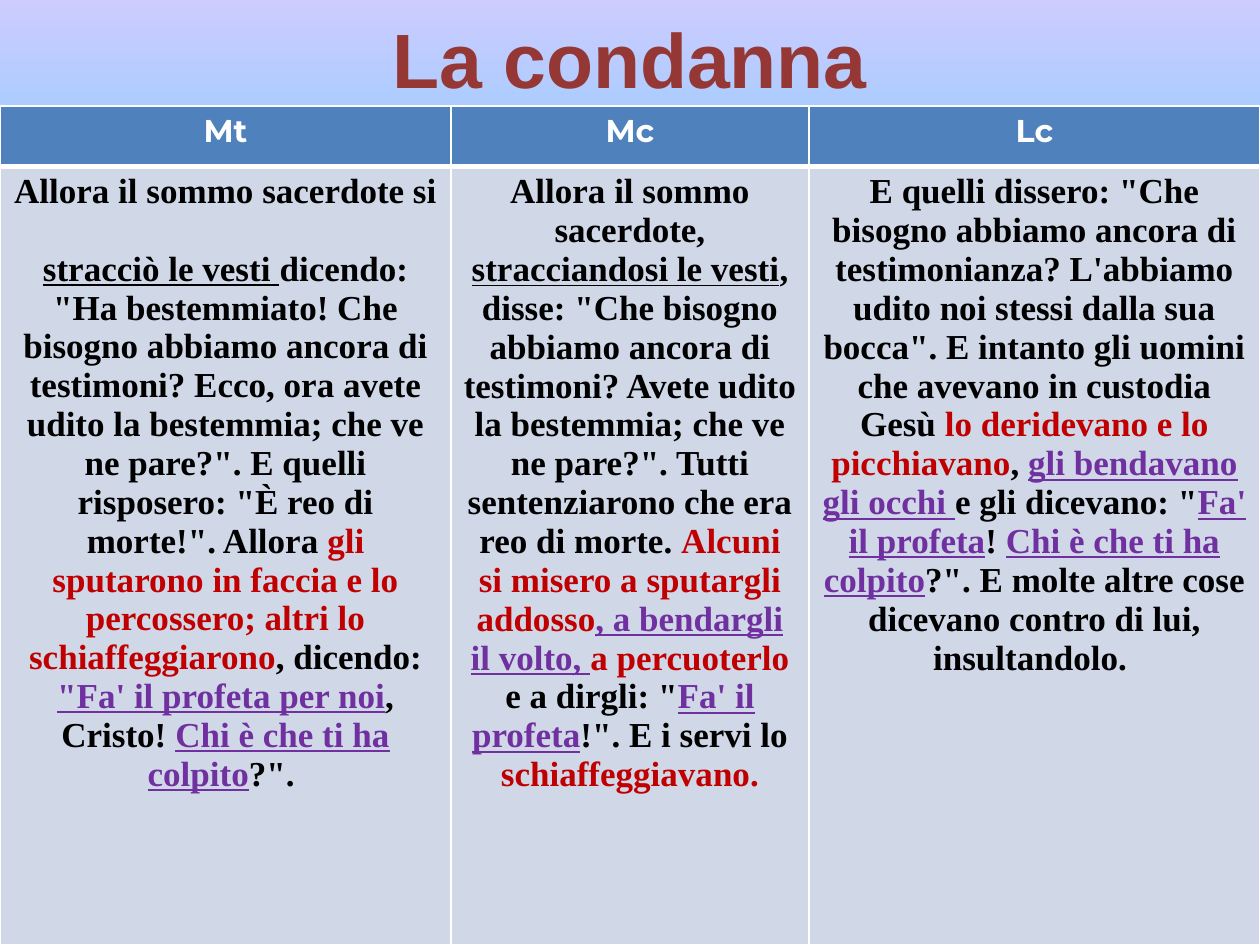
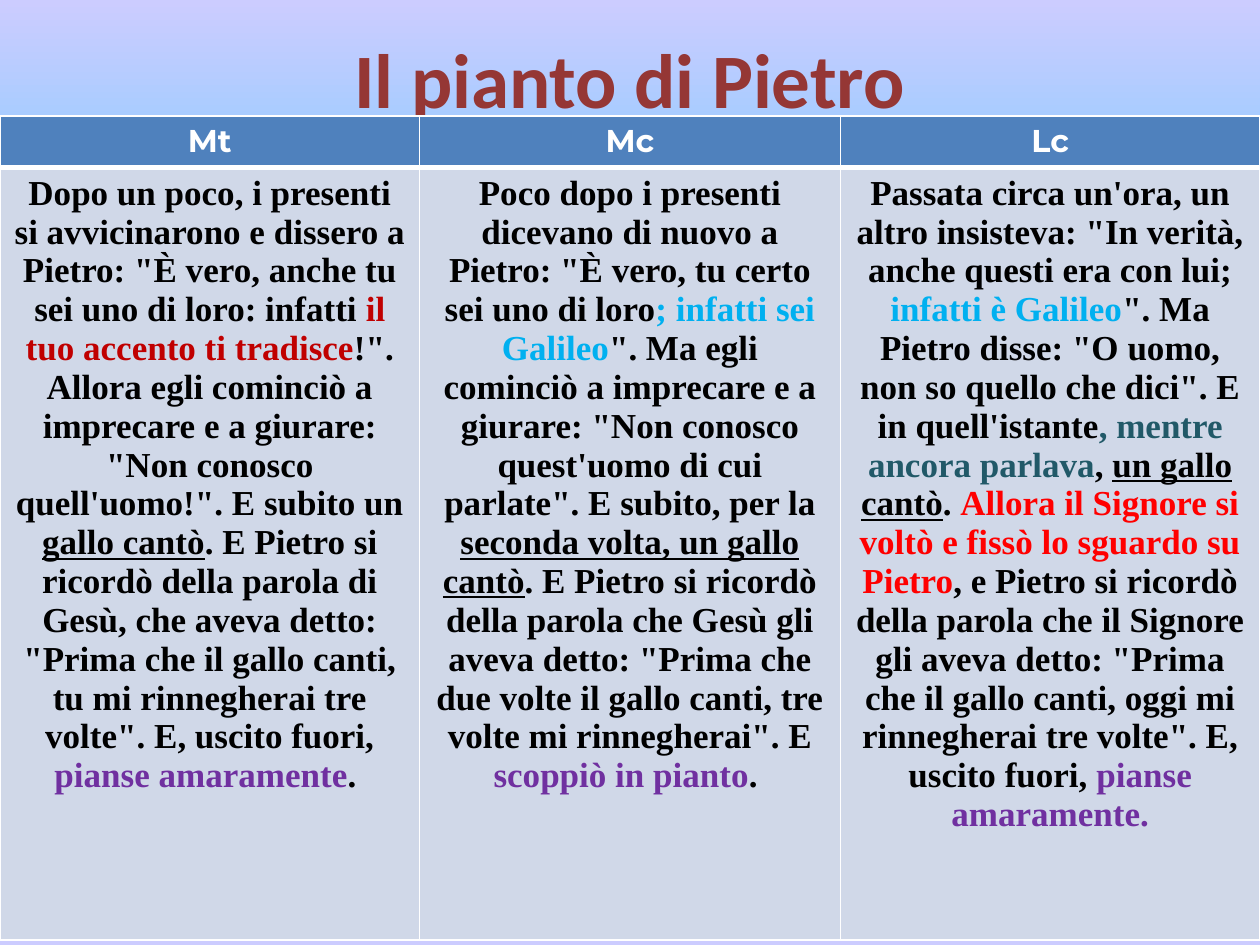
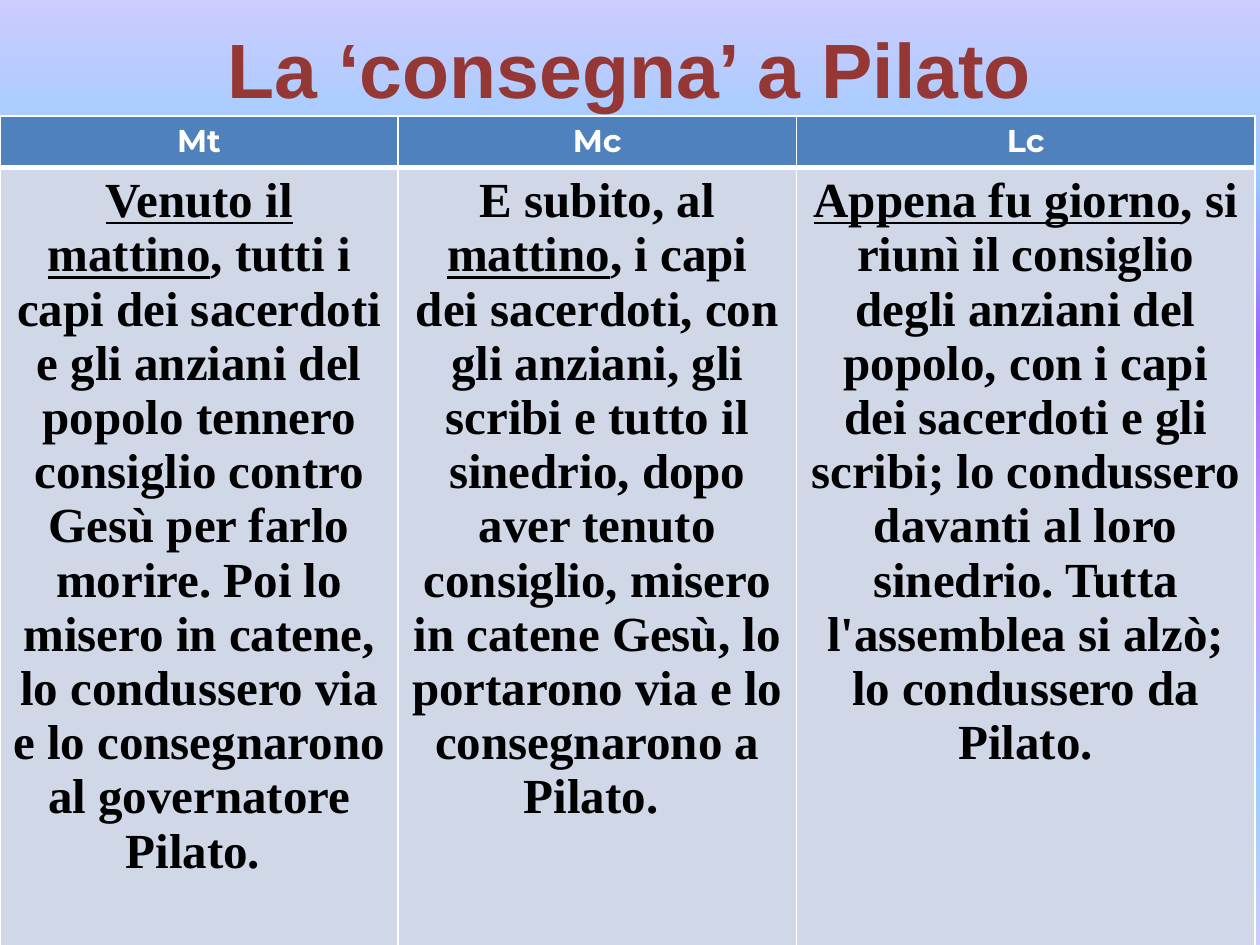
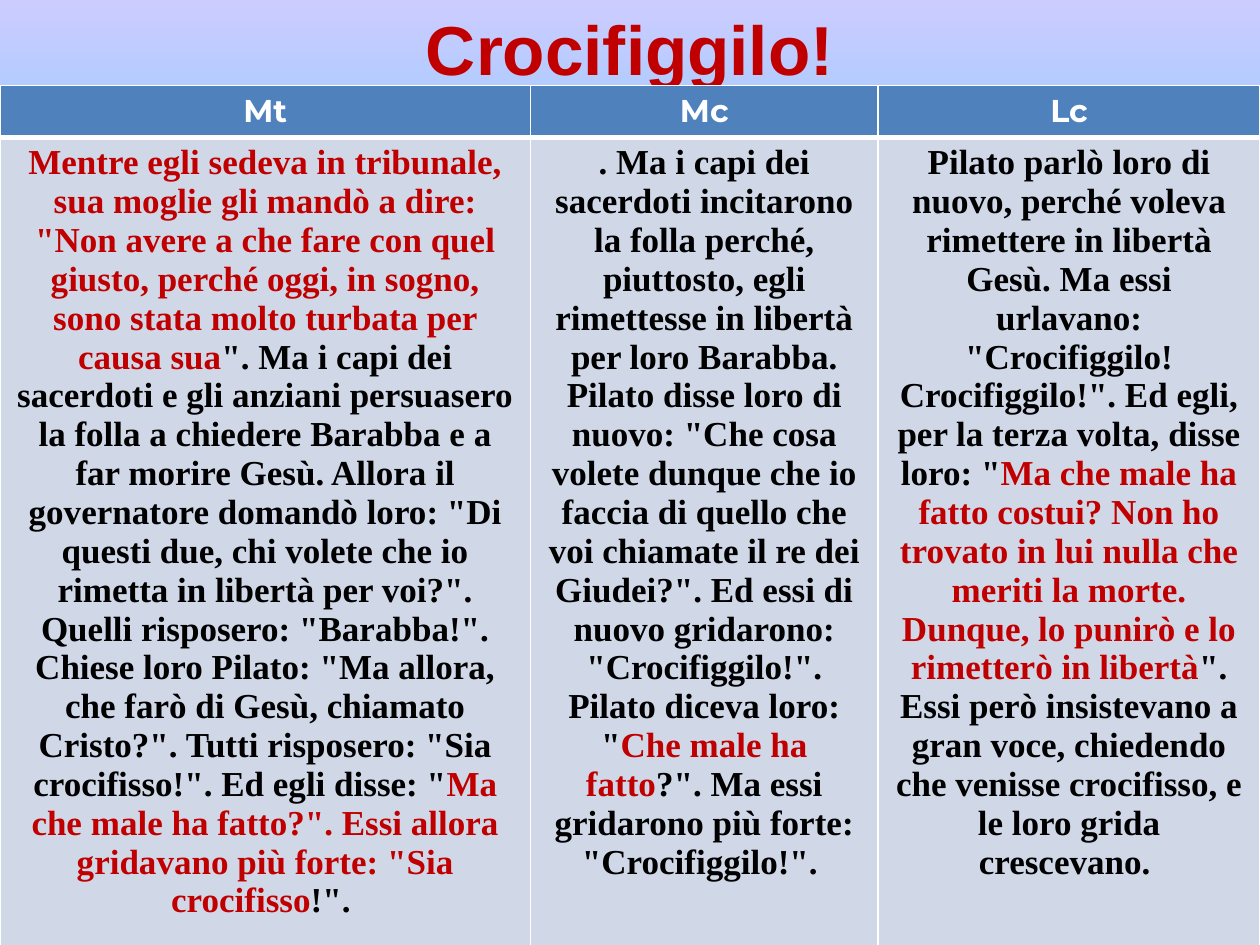
"""Builds four synoptic slides that compare Mt, Mc and Lc on the Passion."""
from dataclasses import dataclass
from typing import NamedTuple

from lxml import etree
from pptx import Presentation
from pptx import util as u
from pptx.dml.color import RGBColor
from pptx.enum import text
from pptx.oxml.ns import qn

PX = 9144
SLIDE_WIDTH, SLIDE_HEIGHT = 1000, 750
TITLE_LEFT, TITLE_WIDTH = 50, 900
TITLE_ONLY_LAYOUT = 5
THIN, THICK = 1, 3
GOSPELS = ("Mt", "Mc", "Lc")
HEADER_FONT, VERSE_FONT = "Montserrat", "Times New Roman"

COLORS = {
    "black": "000000",
    "white": "FFFFFF",
    "brown": "953735",
    "crimson": "C00000",
    "red": "FF0000",
    "purple": "7030A0",
    "sky": "00B0F0",
    "teal": "215968",
    "header": "4F81BD",
    "body": "D0D8E8",
}
BACKDROP = (
    (0, "CCCCFF"), (18, "99CCFF"), (36, "9966FF"),
    (61, "CC99FF"), (82, "99CCFF"), (100, "CCCCFF"),
)


class Span(NamedTuple):
    """A piece of verse with one colour and underline."""
    words: str
    color: str = "black"
    underline: bool = False


@dataclass(frozen=True)
class Passage:
    """A paragraph of verse and the space above it in points."""
    spans: tuple[Span, ...]
    space_before: int = 0


@dataclass(frozen=True)
class Synopsis:
    """One slide: its title and a table with one column per gospel."""
    title: str
    title_height: int
    table_top: int
    header_height: int
    body_height: int
    widths: tuple[int, ...]
    columns: tuple[tuple[Passage, ...], ...]
    title_font: str = "Arial"
    title_size: float = 44
    title_color: str = "brown"
    verse_size: int = 20


def under(words: str, color: str = "black") -> Span:
    """Return an underlined span."""
    return Span(words, color, True)


def passage(*spans: Span | str, space_before: int = 0) -> Passage:
    """Return a passage in which bare strings are plain spans."""
    return Passage(
        tuple(Span(span) if isinstance(span, str) else span for span in spans),
        space_before,
    )


SYNOPSES = (
    Synopsis(
        "La condanna", 92, 84, 48, 618, (358, 284, 358),
        (
            (
                passage("Allora il sommo sacerdote si "),
                passage(
                    under("stracciò le vesti "),
                    'dicendo: "Ha bestemmiato! Che bisogno abbiamo ancora di '
                    'testimoni? Ecco, ora avete udito la bestemmia; che ve ne '
                    'pare?". E quelli risposero: "È reo di morte!". Allora ',
                    Span("gli sputarono in faccia e lo percossero; altri lo "
                         "schiaffeggiarono", "crimson"),
                    ", dicendo: ",
                    under('''"Fa' il profeta per noi''', "purple"),
                    ", Cristo! ",
                    under("Chi è che ti ha colpito", "purple"),
                    '?". ',
                    space_before=22,
                ),
            ),
            (
                passage(
                    "Allora il sommo sacerdote, ",
                    under("stracciandosi le vesti"),
                    ', disse: "Che bisogno abbiamo ancora di testimoni? Avete '
                    'udito la bestemmia; che ve ne pare?". Tutti sentenziarono '
                    'che era reo di morte. ',
                    Span("Alcuni si misero a sputargli addosso", "crimson"),
                    under(", a bendargli il volto, ", "purple"),
                    Span("a percuoterlo ", "crimson"),
                    'e a dirgli: "',
                    under("Fa' il profeta", "purple"),
                    '!". E i servi lo ',
                    Span("schiaffeggiavano.", "crimson"),
                ),
            ),
            (
                passage(
                    'E quelli dissero: "Che bisogno abbiamo ancora di '
                    "testimonianza? L'abbiamo udito noi stessi dalla sua "
                    'bocca". E intanto gli uomini che avevano in custodia Gesù',
                    Span(" lo deridevano e lo picchiavano", "crimson"),
                    ", ",
                    under("gli bendavano gli occhi ", "purple"),
                    'e gli dicevano: "',
                    under("Fa' il profeta", "purple"),
                    "! ",
                    under("Chi è che ti ha colpito", "purple"),
                    '?". E molte altre cose dicevano contro di lui, '
                    'insultandolo. ',
                ),
            ),
        ),
    ),
    Synopsis(
        "Il pianto di Pietro", 123, 92, 41, 613, (333, 334, 333),
        (
            (
                passage(
                    'Dopo un poco, i presenti si avvicinarono e dissero a '
                    'Pietro: "È vero, anche tu sei uno di loro: infatti ',
                    Span("il tuo accento ti tradisce", "crimson"),
                    '!". Allora egli cominciò a imprecare e a giurare: "Non '
                    "conosco quell'uomo!"
                    '". E subito un ',
                    under("gallo cantò"),
                    '. E Pietro si ricordò della parola di Gesù, che aveva '
                    'detto: "Prima che il gallo canti, tu mi rinnegherai tre '
                    'volte". E, uscito fuori, ',
                    Span("pianse amaramente", "purple"),
                    ". ",
                ),
            ),
            (
                passage(
                    'Poco dopo i presenti dicevano di nuovo a Pietro: "È vero, '
                    'tu certo sei uno di loro',
                    Span("; infatti sei Galileo", "sky"),
                    '". Ma egli cominciò a imprecare e a giurare: "Non conosco '
                    "quest'uomo di cui parlate"
                    '". E subito, per la ',
                    under("seconda volta, un gallo cantò"),
                    '. E Pietro si ricordò della parola che Gesù gli aveva '
                    'detto: "Prima che due volte il gallo canti, tre volte mi '
                    'rinnegherai". E ',
                    Span("scoppiò in pianto", "purple"),
                    ". ",
                ),
            ),
            (
                passage(
                    "Passata circa un'ora, un altro insisteva: "
                    '"In verità, anche questi era con lui; ',
                    Span("infatti è Galileo", "sky"),
                    '". Ma Pietro disse: "O uomo, non so quello che dici". '
                    "E in quell'istante",
                    Span(", mentre ancora parlava", "teal"),
                    ", ",
                    under("un gallo cantò"),
                    ". ",
                    Span("Allora il Signore si voltò e fissò lo sguardo su "
                         "Pietro", "red"),
                    ', e Pietro si ricordò della parola che il Signore gli '
                    'aveva detto: "Prima che il gallo canti, oggi mi '
                    'rinnegherai tre volte". E, uscito fuori, ',
                    Span("pianse amaramente.", "purple"),
                ),
            ),
        ),
        title_font="Calibri",
    ),
    Synopsis(
        "La ‘consegna’ a Pilato", 107, 92, 41, 666, (316, 316, 364),
        (
            (
                passage(
                    under("Venuto il mattino"),
                    ", tutti i capi dei sacerdoti e gli anziani del popolo "
                    "tennero consiglio contro Gesù per farlo morire. Poi lo "
                    "misero in catene, lo condussero via e lo consegnarono al "
                    "governatore Pilato. ",
                ),
            ),
            (
                passage(
                    "E subito, al ",
                    under("mattino"),
                    ", i capi dei sacerdoti, con gli anziani, gli scribi e "
                    "tutto il sinedrio, dopo aver tenuto consiglio, misero in "
                    "catene Gesù, lo portarono via e lo consegnarono a "
                    "Pilato. ",
                ),
            ),
            (
                passage(
                    under("Appena fu giorno"),
                    ", si riunì il consiglio degli anziani del popolo, con i "
                    "capi dei sacerdoti e gli scribi; lo condussero davanti al "
                    "loro sinedrio. Tutta l'assemblea si alzò; lo condussero "
                    "da Pilato.",
                ),
            ),
        ),
        verse_size=28,
    ),
    Synopsis(
        "Crocifiggilo!", 76, 68, 41, 776, (421, 276, 303),
        (
            (
                passage(
                    Span('Mentre egli sedeva in tribunale, sua moglie gli '
                         'mandò a dire: "Non avere a che fare con quel giusto, '
                         'perché oggi, in sogno, sono stata molto turbata per '
                         'causa sua', "crimson"),
                    '". Ma i capi dei sacerdoti e gli anziani persuasero la '
                    'folla a chiedere Barabba e a far morire Gesù. Allora il '
                    'governatore domandò loro: "Di questi due, chi volete che '
                    'io rimetta in libertà per voi?". Quelli risposero: '
                    '"Barabba!". Chiese loro Pilato: "Ma allora, che farò di '
                    'Gesù, chiamato Cristo?". Tutti risposero: "Sia '
                    'crocifisso!". Ed egli disse: "',
                    Span('Ma che male ha fatto?". Essi allora gridavano più '
                         'forte: "Sia crocifisso', "crimson"),
                    '!". ',
                ),
            ),
            (
                passage(
                    ". Ma i capi dei sacerdoti incitarono la folla perché, "
                    "piuttosto, egli rimettesse in libertà per loro Barabba.",
                ),
                passage(
                    'Pilato disse loro di nuovo: "Che cosa volete dunque che '
                    'io faccia di quello che voi chiamate il re dei Giudei?". '
                    'Ed essi di nuovo gridarono: "Crocifiggilo!". Pilato '
                    'diceva loro: "',
                    Span("Che male ha fatto", "crimson"),
                    '?". Ma essi gridarono più forte: "Crocifiggilo!". ',
                ),
            ),
            (
                passage(
                    'Pilato parlò loro di nuovo, perché voleva rimettere in '
                    'libertà Gesù. Ma essi urlavano: "Crocifiggilo! '
                    'Crocifiggilo!". Ed egli, per la terza volta, disse loro: '
                    '"',
                    Span("Ma che male ha fatto costui? Non ho trovato in lui "
                         "nulla che meriti la morte. Dunque, lo punirò e lo "
                         "rimetterò in libertà", "crimson"),
                    '". Essi però insistevano a gran voce, chiedendo che '
                    'venisse crocifisso, e le loro grida crescevano. ',
                ),
            ),
        ),
        title_size=39.6,
        title_color="crimson",
    ),
)


def px(length: int) -> u.Emu:
    """Turn px into EMU."""
    return u.Emu(length * PX)


def write(para, words: str, *, font: str, size: float, color: str,
          underline: bool = False) -> None:
    """Add a bold run to a centred paragraph."""
    para.alignment = text.PP_ALIGN.CENTER
    span = para.add_run()
    span.text = words
    span.font.name = font
    span.font.size = u.Pt(size)
    span.font.bold = True
    span.font.underline = underline
    span.font.color.rgb = RGBColor.from_string(COLORS[color])


def paint_backdrop(master) -> None:
    """Give the master the vertical gradient that all slides share."""
    fill = master.background.fill
    fill.gradient()
    fill.gradient_angle = 270
    stops = master.element.find(".//" + qn("a:gsLst"))
    for stop in list(stops):
        stops.remove(stop)
    for percent, color in BACKDROP:
        stop = etree.SubElement(stops, qn("a:gs"), pos=str(percent * 1000))
        etree.SubElement(stop, qn("a:srgbClr"), val=color)


def style_cell(cell, fill: str, top: int, bottom: int) -> None:
    """Set the white borders, in points, and the fill of a cell."""
    properties = cell._tc.get_or_add_tcPr()
    edges = {"a:lnL": THIN, "a:lnR": THIN, "a:lnT": top, "a:lnB": bottom}
    for edge, width in edges.items():
        line = etree.SubElement(properties, qn(edge), w=str(u.Pt(width)))
        solid = etree.SubElement(line, qn("a:solidFill"))
        etree.SubElement(solid, qn("a:srgbClr"), val=COLORS["white"])
    cell.fill.solid()
    cell.fill.fore_color.rgb = RGBColor.from_string(COLORS[fill])


def add_title(page, synopsis: Synopsis) -> None:
    """Place and write the title."""
    box = page.shapes.title
    box.left, box.top = px(TITLE_LEFT), px(0)
    box.width, box.height = px(TITLE_WIDTH), px(synopsis.title_height)
    frame = box.text_frame
    frame.auto_size = text.MSO_AUTO_SIZE.NONE
    frame.vertical_anchor = text.MSO_ANCHOR.MIDDLE
    write(frame.paragraphs[0], synopsis.title, font=synopsis.title_font,
          size=synopsis.title_size, color=synopsis.title_color)


def write_verses(cell, passages: tuple[Passage, ...], size: int) -> None:
    """Fill a body cell with its passages."""
    frame = cell.text_frame
    for index, verse in enumerate(passages):
        para = frame.add_paragraph() if index else frame.paragraphs[0]
        if verse.space_before:
            para.space_before = u.Pt(verse.space_before)
        for span in verse.spans:
            write(para, span.words, font=VERSE_FONT, size=size,
                  color=span.color, underline=span.underline)


def add_gospel_table(page, synopsis: Synopsis) -> None:
    """Draw the header row and the row of verses."""
    heights = (synopsis.header_height, synopsis.body_height)
    table = page.shapes.add_table(
        len(heights), len(GOSPELS), px(0), px(synopsis.table_top),
        px(sum(synopsis.widths)), px(sum(heights)),
    ).table
    for row, height in zip(table.rows, heights):
        row.height = px(height)
    for index, gospel in enumerate(GOSPELS):
        table.columns[index].width = px(synopsis.widths[index])
        header, body = table.cell(0, index), table.cell(1, index)
        style_cell(header, "header", THIN, THICK)
        style_cell(body, "body", THICK, THIN)
        write(header.text_frame.paragraphs[0], gospel, font=HEADER_FONT,
              size=18, color="white")
        write_verses(body, synopsis.columns[index], synopsis.verse_size)


def main() -> None:
    """Build and save the deck."""
    deck = Presentation()
    deck.slide_width, deck.slide_height = px(SLIDE_WIDTH), px(SLIDE_HEIGHT)
    paint_backdrop(deck.slide_master)
    for synopsis in SYNOPSES:
        page = deck.slides.add_slide(deck.slide_layouts[TITLE_ONLY_LAYOUT])
        add_title(page, synopsis)
        add_gospel_table(page, synopsis)
    deck.save("out.pptx")


if __name__ == "__main__":
    main()
